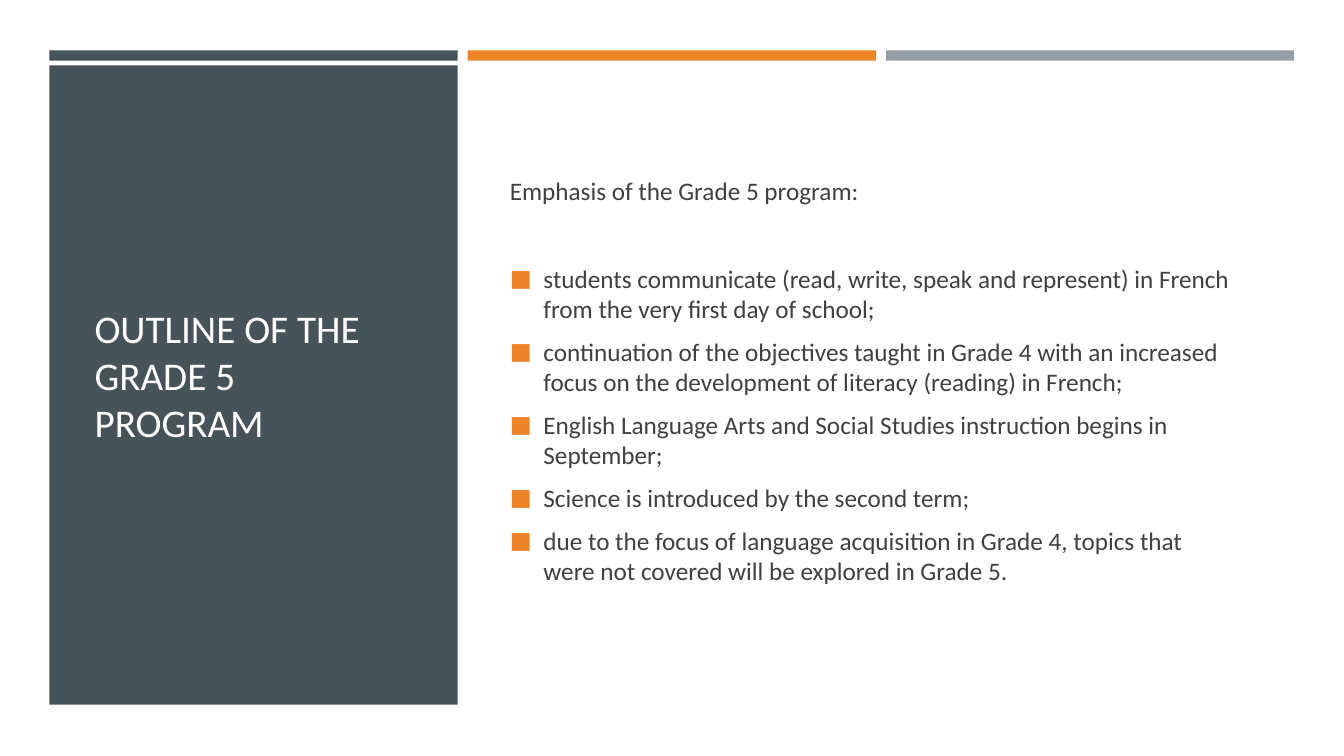
"""Build the Grade 5 program outline slide."""
from dataclasses import dataclass

from lxml.etree import SubElement
from pptx import Presentation
from pptx.dml.color import RGBColor as RGB
from pptx.enum.shapes import MSO_SHAPE as SHAPE
from pptx.enum.text import MSO_ANCHOR as ANCHOR
from pptx.oxml.ns import qn
from pptx.util import Pt

TITLE = "OUTLINE OF THE GRADE 5 PROGRAM"
LEAD = "Emphasis of the Grade 5 program:"
POINTS = [
    "students communicate (read, write, speak and represent) in French from the very first day of school;",
    "continuation of the objectives taught in Grade 4 with an increased focus on the development of literacy (reading) in French;",
    "English Language Arts and Social Studies instruction begins in September;",
    "Science is introduced by the second term;",
    "due to the focus of language acquisition in Grade 4, topics that were not covered will be explored in Grade 5.",
]


@dataclass(frozen=True)
class Theme:
    """Colours and type sizes."""
    font: str = "Calibri"
    title_size: int = 28
    body_size: int = 18
    paper: str = "FFFFFF"
    slate: str = "465359"
    orange: str = "ED8428"
    grey: str = "969FA7"
    title: str = "FFFEFF"
    body: str = "404040"


T = Theme()
LEFT, BAR_TOP, BAR_W, BAR_H, BAR_GAP = 35.28, 36, 291.6, 7.4, 7.2
PANEL_TOP, PANEL_H = 46.8, 456.5
TITLE_BOX = (60.48, 82.08, 240.48, 370.8)
BODY_BOX = (357.12, 82.08, 529.92, 379.44)
INDENT, BEFORE, AFTER, LEAD_GAP = 24, 3, 6, 35


def add_block(s, x, y, w, h, color):
    """Add a plain filled rectangle."""
    sp = s.shapes.add_shape(SHAPE.RECTANGLE, Pt(x), Pt(y), Pt(w), Pt(h))
    sp.shadow.inherit = False
    sp.fill.solid()
    sp.fill.fore_color.rgb = RGB.from_string(color)
    sp.line.fill.background()


def add_text_frame(s, box):
    """Add a wrapped, vertically centred text box."""
    tf = s.shapes.add_textbox(*map(Pt, box)).text_frame
    tf.word_wrap = True
    tf.vertical_anchor = ANCHOR.MIDDLE
    return tf


def add_run(p, text, size, color):
    """Add one styled run."""
    r = p.add_run()
    r.text = text
    r.font.name = T.font
    r.font.size = Pt(size)
    r.font.color.rgb = RGB.from_string(color)


def add_bullet(p):
    """Give a paragraph a square bullet and hanging indent."""
    pPr = p._p.get_or_add_pPr()
    pPr.set("marL", str(Pt(INDENT)))
    pPr.set("indent", str(-Pt(INDENT)))
    SubElement(SubElement(pPr, qn("a:buClr")), qn("a:srgbClr"), val=T.orange)
    SubElement(pPr, qn("a:buSzPct"), val="92000")
    SubElement(pPr, qn("a:buFont"), typeface=T.font)
    SubElement(pPr, qn("a:buChar"), char="■")


def main():
    """Compose and save the slide."""
    prs = Presentation()
    prs.slide_width, prs.slide_height = Pt(960), Pt(540)
    s = prs.slides.add_slide(prs.slide_layouts[6])
    s.background.fill.solid()
    s.background.fill.fore_color.rgb = RGB.from_string(T.paper)

    for i, color in enumerate((T.slate, T.orange, T.grey)):
        add_block(s, LEFT + i * (BAR_W + BAR_GAP), BAR_TOP, BAR_W, BAR_H, color)
    add_block(s, LEFT, PANEL_TOP, BAR_W, PANEL_H, T.slate)

    tf = add_text_frame(s, TITLE_BOX)
    add_run(tf.paragraphs[0], TITLE, T.title_size, T.title)

    tf = add_text_frame(s, BODY_BOX)
    p = tf.paragraphs[0]
    p.space_after = Pt(AFTER)
    add_run(p, LEAD, T.body_size, T.body)
    for i, point in enumerate(POINTS):
        p = tf.add_paragraph()
        add_bullet(p)
        p.space_before = Pt(BEFORE if i else LEAD_GAP)
        p.space_after = Pt(AFTER if i < len(POINTS) - 1 else 0)
        add_run(p, point, T.body_size, T.body)

    prs.save("out.pptx")


if __name__ == "__main__":
    main()
